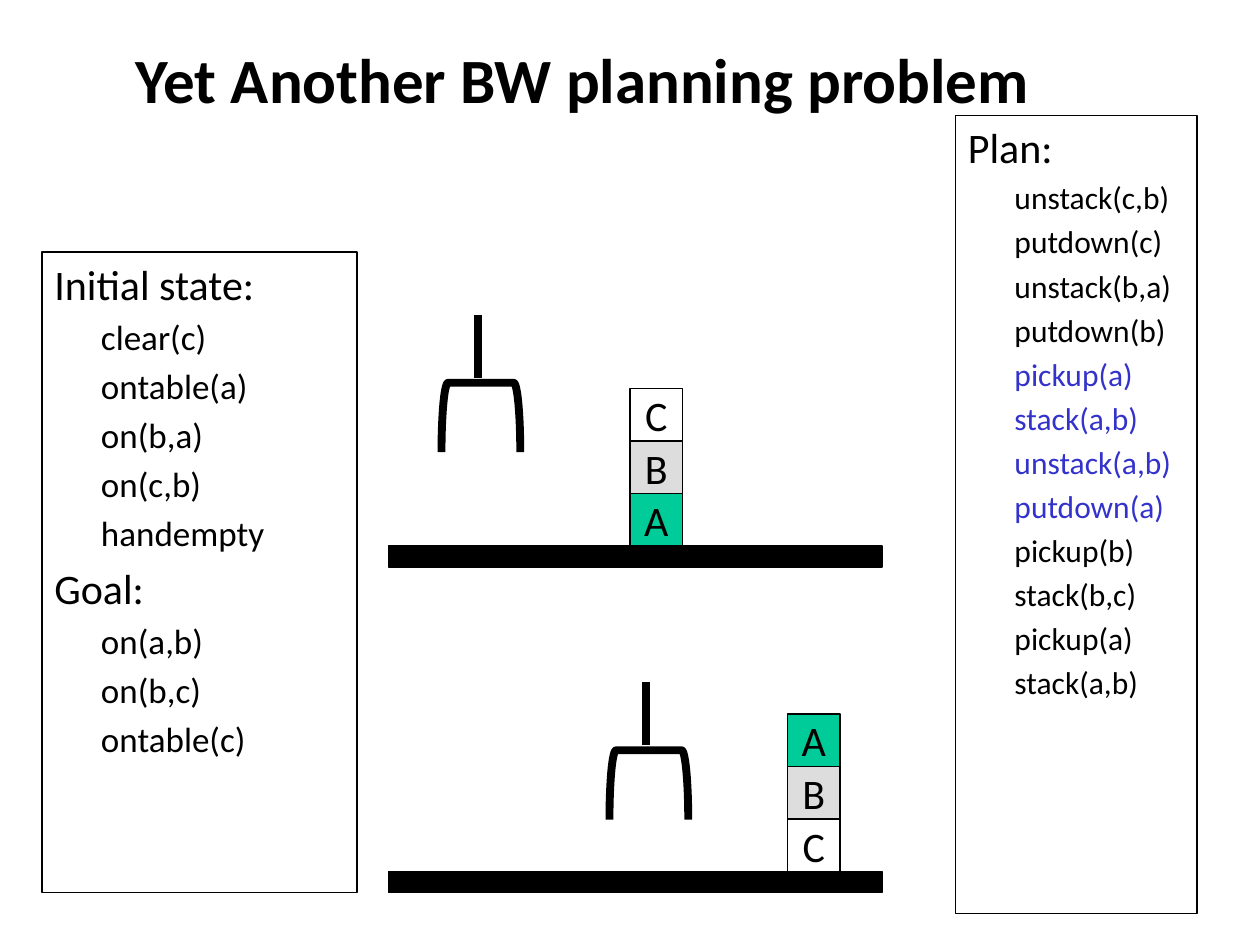
"""Build a slide showing a blocks-world planning problem with its start, goal and plan."""
from dataclasses import dataclass

from lxml import etree
from pptx import Presentation
from pptx.dml.color import RGBColor
from pptx.enum.shapes import MSO_CONNECTOR, MSO_SHAPE
from pptx.enum.text import MSO_ANCHOR, PP_ALIGN
from pptx.oxml.ns import qn
from pptx.util import Inches, Pt

RECTANGLE = MSO_SHAPE.RECTANGLE
BRACKET = MSO_SHAPE.RIGHT_BRACKET
STRAIGHT = MSO_CONNECTOR.STRAIGHT
MIDDLE = MSO_ANCHOR.MIDDLE
TOP = MSO_ANCHOR.TOP
CENTER = PP_ALIGN.CENTER
LEFT = PP_ALIGN.LEFT
CELL = Inches(1) / 12
BLOCK_SIDE = 5
TITLE_ONLY = 5


@dataclass(frozen=True)
class Theme:
    font: str = "Calibri"
    ink: RGBColor = RGBColor(0, 0, 0)
    detour: RGBColor = RGBColor(0x33, 0x33, 0xCC)
    green: RGBColor = RGBColor(0, 0xCC, 0x99)
    grey: RGBColor = RGBColor(0xDD, 0xDD, 0xDD)
    title: int = 36
    heading: int = 24
    state: int = 20
    step: int = 18
    thin: float = 0.75
    thick: float = 4.5


THEME = Theme()
BLOCK_FILLS = {"A": THEME.green, "B": THEME.grey, "C": None}


@dataclass(frozen=True)
class Area:
    column: float
    row: float
    columns: float
    rows: float

    def lengths(self) -> tuple:
        return tuple(cells(n) for n in (self.column, self.row, self.columns, self.rows))


@dataclass(frozen=True)
class Entry:
    text: str
    size: int
    level: int = 0
    color: RGBColor = THEME.ink


@dataclass(frozen=True)
class Scene:
    table_row: float
    stack_column: float
    stack: str
    hand_column: float
    hand_row: float


def cells(count: float) -> int:
    """Turn a number of grid cells into a length."""
    return round(count * CELL)


def style_font(font, size: int, color: RGBColor = THEME.ink, bold: bool = False) -> None:
    """Apply the theme font with a size and colour."""
    font.name, font.size, font.bold = THEME.font, Pt(size), bold
    font.color.rgb = color


def style_line(line, width: float) -> None:
    """Give a line the ink colour and a width."""
    line.color.rgb = THEME.ink
    line.width = Pt(width)


def entries(lines: str, size: int, color: RGBColor = THEME.ink) -> list[Entry]:
    """Make one indented entry per word."""
    return [Entry(text, size, 1, color) for text in lines.split()]


def add_title(page, text: str) -> None:
    """Place and format the title."""
    title = page.shapes.title
    title.left, title.top, title.width, title.height = Area(0, 0, 111, 15).lengths()
    frame = title.text_frame
    frame.text = text
    frame.vertical_anchor = MIDDLE
    para = frame.paragraphs[0]
    para.alignment = CENTER
    style_font(para.runs[0].font, THEME.title, bold=True)


def add_panel(page, area: Area, content: list[Entry]) -> None:
    """Add an outlined box of headings and indented entries."""
    box = page.shapes.add_textbox(*area.lengths())
    style_line(box.line, THEME.thin)
    frame = box.text_frame
    frame.word_wrap = True
    frame.vertical_anchor = TOP
    frame.text = "\n".join(entry.text for entry in content)
    for position, (para, entry) in enumerate(zip(frame.paragraphs, content)):
        para.level = entry.level
        para.alignment = LEFT
        properties = para._p.get_or_add_pPr()
        properties.set("marL", str(Inches(0.62 if entry.level else 0.25)))
        properties.set("indent", str(-Inches(0.25)))
        if position:
            para.space_before = Pt(0.2 * entry.size)
        style_font(para.runs[0].font, entry.size, entry.color)


def add_rectangle(page, area: Area, fill: RGBColor | None):
    """Add a thinly outlined rectangle."""
    shape = page.shapes.add_shape(RECTANGLE, *area.lengths())
    shape.shadow.inherit = False
    if fill is None:
        shape.fill.background()
    else:
        shape.fill.solid()
        shape.fill.fore_color.rgb = fill
    style_line(shape.line, THEME.thin)
    return shape


def add_block(page, name: str, column: float, row: float) -> None:
    """Add one lettered block."""
    block = add_rectangle(page, Area(column, row, BLOCK_SIDE, BLOCK_SIDE), BLOCK_FILLS[name])
    frame = block.text_frame
    frame.margin_left = frame.margin_right = frame.margin_top = frame.margin_bottom = 0
    frame.word_wrap = False
    frame.vertical_anchor = MIDDLE
    frame.text = name
    para = frame.paragraphs[0]
    para.alignment = CENTER
    style_font(para.runs[0].font, THEME.heading)


def add_hand(page, column: float, row: float) -> None:
    """Add a robot hand hanging from an arm."""
    claw = page.shapes.add_shape(BRACKET, *Area(column - 3, row + 6, 6.6, 7.5).lengths())
    claw.rotation = 270
    claw.adjustments[0] = 0.095
    claw.shadow.inherit = False
    claw.fill.background()
    style_line(claw.line, THEME.thick)
    arm = page.shapes.add_connector(
        STRAIGHT, cells(column), cells(row), cells(column), cells(row + 6))
    style_line(arm.line, THEME.thick)
    etree.SubElement(arm._element.spPr, qn("a:effectLst"))


def add_scene(page, scene: Scene) -> None:
    """Add a table with a stack of blocks, listed from the bottom, and a hand."""
    add_rectangle(page, Area(37, scene.table_row, 47, 2), THEME.ink)
    for height, name in enumerate(scene.stack, start=1):
        add_block(page, name, scene.stack_column, scene.table_row - height * BLOCK_SIDE)
    add_hand(page, scene.hand_column, scene.hand_row)


def main() -> None:
    """Build and save the slide."""
    deck = Presentation()
    deck.slide_width, deck.slide_height = Inches(10), Inches(7.5)
    page = deck.slides.add_slide(deck.slide_layouts[TITLE_ONLY])
    add_title(page, "Yet Another BW planning problem")
    add_panel(page, Area(4, 24, 30, 61), [
        Entry("Initial state:", THEME.heading),
        *entries("clear(c) ontable(a) on(b,a) on(c,b) handempty", THEME.state),
        Entry("Goal:", THEME.heading),
        *entries("on(a,b) on(b,c) ontable(c)", THEME.state),
    ])
    add_scene(page, Scene(52, 60, "ABC", 45.5, 30))
    add_scene(page, Scene(83, 75, "CBA", 61.5, 65))
    add_panel(page, Area(91, 11, 23, 76), [
        Entry("Plan:", THEME.heading),
        *entries("unstack(c,b) putdown(c) unstack(b,a) putdown(b)", THEME.step),
        *entries("pickup(a) stack(a,b) unstack(a,b) putdown(a)", THEME.step, THEME.detour),
        *entries("pickup(b) stack(b,c) pickup(a) stack(a,b)", THEME.step),
    ])
    deck.save("out.pptx")


if __name__ == "__main__":
    main()
